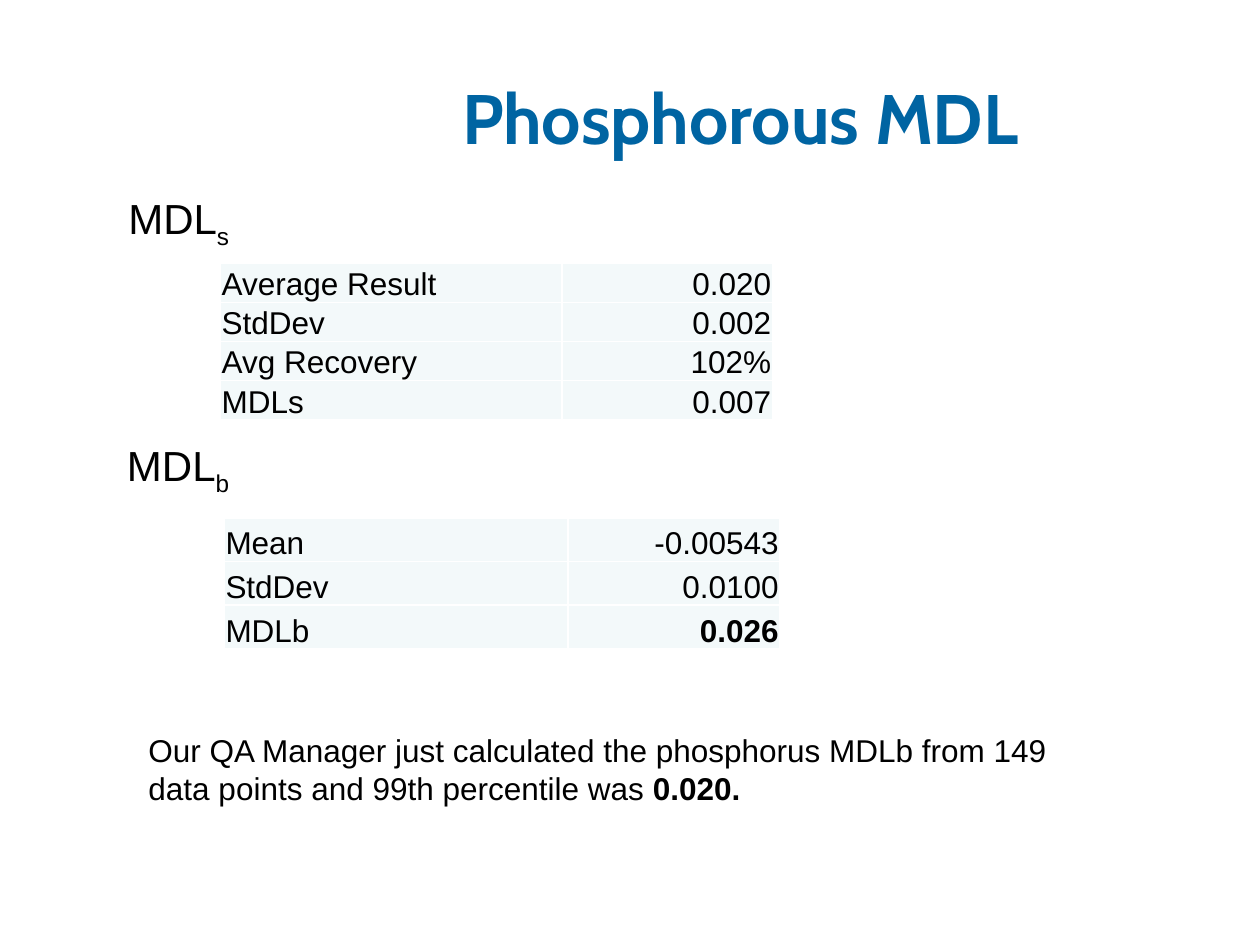
import dataclasses

import pptx
import pptx.dml.color
import pptx.enum.text
import pptx.oxml
import pptx.oxml.ns
import pptx.util

Inches = pptx.util.Inches
ALIGN = pptx.enum.text.PP_ALIGN
ANCHOR = pptx.enum.text.MSO_ANCHOR


@dataclasses.dataclass(frozen=True)
class Theme:
    title_font: str = "Cabin"
    body_font: str = "Arial"
    title_size: int = 40
    label_size: int = 24
    body_size: int = 18
    blue: str = "0064A2"
    black: str = "000000"
    white: str = "FFFFFF"
    cell: str = "F3F9FA"


THEME = Theme()


def rgb(value):
    return pptx.dml.color.RGBColor.from_string(value)


def add_run(p, text, size=THEME.body_size, color=THEME.black, **extra):
    r = p.add_run()
    r.text = text
    fmt = {"name": THEME.body_font, "size": pptx.util.Pt(size), **extra}
    for name, value in fmt.items():
        setattr(r.font, name, value)
    r.font.color.rgb = rgb(color)
    return r


def add_text_box(s, box, anchor=ANCHOR.TOP):
    """Add a wrapping text box and return its first paragraph."""
    tf = s.shapes.add_textbox(*map(Inches, box)).text_frame
    tf.word_wrap = True
    tf.vertical_anchor = anchor
    return tf.paragraphs[0]


def add_title(s, box, text):
    p = add_text_box(s, box, ANCHOR.MIDDLE)
    p.alignment = ALIGN.CENTER
    add_run(p, text, THEME.title_size, THEME.blue, name=THEME.title_font, bold=True)


def add_label(s, box, text, subscript):
    p = add_text_box(s, box)
    add_run(p, text, THEME.label_size)
    r = add_run(p, subscript, THEME.label_size)
    r.font._element.set("baseline", "-25000")


def set_borders(cell):
    tc_pr = cell._tc.get_or_add_tcPr()
    for side in ("lnL", "lnR", "lnT", "lnB"):
        tc_pr.append(pptx.oxml.parse_xml(
            f'<a:{side} {pptx.oxml.ns.nsdecls("a")} w="12700"><a:solidFill>'
            f'<a:srgbClr val="{THEME.white}"/></a:solidFill></a:{side}>'))


def add_results(s, box, col_widths, rows, bold_values=()):
    """Add a table of names and right-aligned values with equal rows."""
    table = s.shapes.add_table(len(rows), 2, *map(Inches, box)).table
    table.first_row = table.horz_banding = False
    for column, width in zip(table.columns, col_widths):
        column.width = Inches(width)
    cell_format = {
        "vertical_anchor": ANCHOR.BOTTOM,
        "margin_left": Inches(0.01),
        "margin_right": Inches(0.01),
        "margin_top": Inches(0.01),
        "margin_bottom": 0,
    }
    for i, row in enumerate(rows):
        table.rows[i].height = Inches(box[3] / len(rows))
        for j, text in enumerate(row):
            cell = table.cell(i, j)
            for name, value in cell_format.items():
                setattr(cell, name, value)
            set_borders(cell)
            cell.fill.solid()
            cell.fill.fore_color.rgb = rgb(THEME.cell)
            p = cell.text_frame.paragraphs[0]
            p.alignment = ALIGN.RIGHT if j else ALIGN.LEFT
            add_run(p, text, bold=text in bold_values)


def add_note(s, box, text, result):
    p = add_text_box(s, box)
    add_run(p, text)
    add_run(p, result, bold=True)


def main():
    prs = pptx.Presentation()
    prs.slide_width, prs.slide_height = Inches(10), Inches(7.5)
    s = prs.slides.add_slide(prs.slide_layouts[6])

    add_title(s, (2.25, 0.3, 7.25, 1.25), "Phosphorous MDL")
    add_label(s, (0.92, 1.48, 1.67, 0.5), "MDL", "s")
    add_results(s, (1.75, 2.09, 4.38, 1.16), (2.71, 1.67), [
        ("Average Result", "0.020"),
        ("StdDev", "0.002"),
        ("Avg Recovery", "102%"),
        ("MDLs", "0.007"),
    ])
    add_label(s, (0.91, 3.44, 1.67, 0.5), "MDL", "b")
    add_results(s, (1.78, 4.11, 4.42, 1.04), (2.73, 1.68), [
        ("Mean", "-0.00543"),
        ("StdDev", "0.0100"),
        ("MDLb", "0.026"),
    ], bold_values=("0.026",))
    add_note(s, (1.08, 5.75, 7.58, 0.71),
             "Our QA Manager just calculated the phosphorus MDLb from 149 data points "
             "and 99th percentile was ", "0.020.")

    prs.save("out.pptx")


if __name__ == "__main__":
    main()
